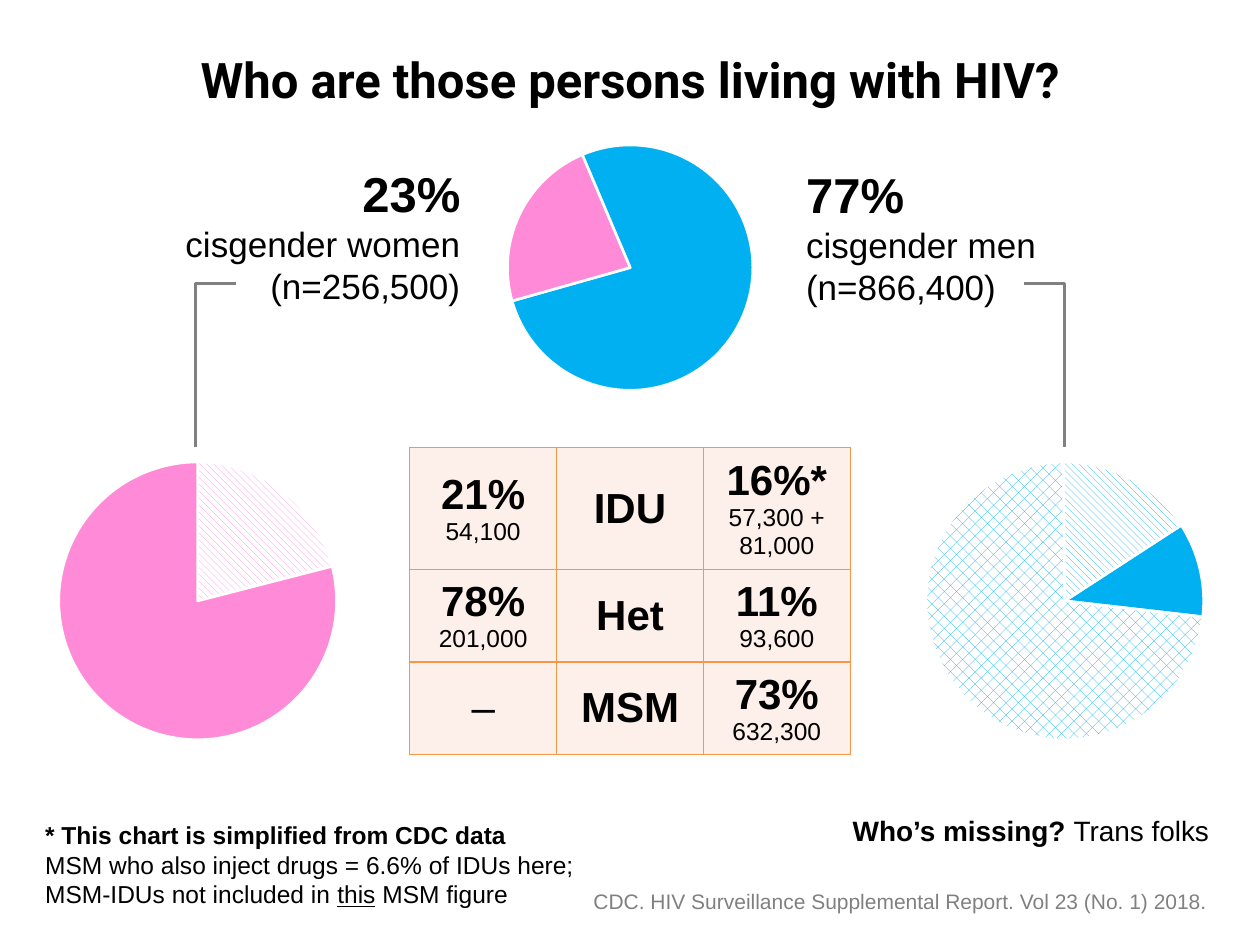
from dataclasses import dataclass

from lxml import etree
from pptx import Presentation
from pptx import util as u
from pptx.chart import data
from pptx.dml import color
from pptx.enum import chart, dml, shapes, text
from pptx.oxml import ns, parse_xml

Cm, Pt, RGB = u.Cm, u.Pt, color.RGBColor.from_string
LEFT, CENTER, RIGHT = text.PP_ALIGN.LEFT, text.PP_ALIGN.CENTER, text.PP_ALIGN.RIGHT


@dataclass(frozen=True)
class Theme:
    font: str = "Arial"
    title_font: str = "Roboto"
    chart_font: str = "Calibri"
    black: str = "000000"
    white: str = "FFFFFF"
    gray: str = "808080"
    men: str = "00B0F0"
    women: str = "FF8AD8"
    cell: str = "FDEFE9"
    border: str = "F79646"
    title: int = 28
    figure: int = 24
    label: int = 20
    aside: int = 16
    note: int = 14
    source: int = 12


T = Theme()


def write(tf, paragraphs, align=LEFT, font=T.font, fill=T.black):
    """Each paragraph is a list of runs: (text, size, style), style of b and u."""
    tf.word_wrap = True
    for i, runs in enumerate(paragraphs):
        p = tf.paragraphs[0] if i == 0 else tf.add_paragraph()
        p.alignment = align
        for words, size, style in runs:
            for n, line in enumerate(words.split("\n")):
                if n:
                    p.add_line_break()
                if not line:
                    continue
                r = p.add_run()
                r.text = line
                r.font.name, r.font.size = font, Pt(size)
                r.font.bold, r.font.underline = "b" in style, "u" in style
                r.font.color.rgb = RGB(fill)


def add_text(x, y, w, h, paragraphs, **look):
    tf = s.shapes.add_textbox(Cm(x), Cm(y), Cm(w), Cm(h)).text_frame
    write(tf, paragraphs, **look)
    return tf


prs = Presentation()
prs.slide_width, prs.slide_height = Cm(25.4), Cm(19.05)
s = prs.slides.add_slide(prs.slide_layouts[6])

# Title
tf = add_text(1.27, 0, 22.86, 3.18,
              [[("Who are those persons living with HIV?", T.title, "b")]],
              align=CENTER, font=T.title_font)
tf.vertical_anchor = text.MSO_ANCHOR.MIDDLE

# Source line
add_text(11, 17.78, 13.59, 0.76,
         [[("CDC. HIV Surveillance Supplemental Report. Vol 23 (No. 1) 2018.", T.source, "")]],
         align=RIGHT, fill=T.gray)

# Pies: everyone, men, women
stripes = dml.MSO_PATTERN.WIDE_DOWNWARD_DIAGONAL
dots = dml.MSO_PATTERN.PERCENT_30
pies = [
    (9.53, 2.54, 5.72, 4.95, 337, [(77, T.men, None), (23, T.women, None)]),
    (18.29, 7.82, 8.59, 5.6, 57, [(11, T.men, None), (73, T.men, dots), (16, T.men, stripes)]),
    (0.81, 7.82, 8.59, 5.6, 0, [(21, T.women, stripes), (79, T.women, None)]),
]
pie_w = 6.35
for x, y, h, diameter, start, slices in pies:
    cd = data.CategoryChartData()
    cd.categories = [str(i + 1) for i in range(len(slices))]
    cd.add_series("Series 1", [value for value, _, _ in slices])
    ch = s.shapes.add_chart(chart.XL_CHART_TYPE.PIE, Cm(x), Cm(y), Cm(pie_w), Cm(h), cd).chart
    ch.has_title = ch.has_legend = False
    ch.font.name, ch.font.size = T.chart_font, Pt(10)
    ch.font.color.rgb = RGB(T.black)
    plot = ch.plots[0]
    plot.vary_by_categories = True
    for i, (_, shade, pattern) in enumerate(slices):
        fmt = plot.series[0].points[i].format
        if pattern is None:
            fmt.fill.solid()
            fmt.fill.fore_color.rgb = RGB(shade)
        else:
            fmt.fill.patterned()
            fmt.fill.pattern = pattern
            fmt.fill.fore_color.rgb = RGB(shade)
            fmt.fill.back_color.rgb = RGB(T.white)
        fmt.line.color.rgb = RGB(T.white)
        fmt.line.width = Pt(1.5)

    # Start angle, and a centred plot of the given diameter
    pie = ch._chartSpace.find(".//" + ns.qn("c:pieChart"))
    for old in pie.findall(ns.qn("c:firstSliceAng")):
        pie.remove(old)
    etree.SubElement(pie, ns.qn("c:firstSliceAng")).set("val", str(start))
    area = pie.getparent()
    for old in area.findall(ns.qn("c:layout")):
        area.remove(old)
    fw, fh = diameter / pie_w, diameter / h
    area.insert(0, parse_xml(
        f'<c:layout {ns.nsdecls("c")}><c:manualLayout><c:layoutTarget val="inner"/>'
        f'<c:xMode val="edge"/><c:yMode val="edge"/>'
        f'<c:x val="{(1 - fw) / 2:.3f}"/><c:y val="{(1 - fh) / 2:.3f}"/>'
        f'<c:w val="{fw:.3f}"/><c:h val="{fh:.3f}"/></c:manualLayout></c:layout>'))

# Captions beside the top pie
for x, y, share, group, align in [
    (16, 3.2, "77%", "cisgender men\n(n=866,400)", LEFT),
    (2.44, 3.18, "23%", "cisgender women\n(n=256,500)", RIGHT),
]:
    add_text(x, y, 7.09, 3.18, [[(share, T.title, "b")], [(group, T.label, "")]], align=align)

# Table of transmission groups: women, group, men
rows = [
    (2.46, ("21%", "54,100"), ("IDU", ""), ("16%*", "57,300 +\n81,000")),
    (1.86, ("78%", "201,000"), ("Het", ""), ("11%", "93,600")),
    (1.86, ("–", ""), ("MSM", ""), ("73%", "632,300")),
]
tbl = s.shapes.add_table(3, 3, Cm(8.26), Cm(9.02), Cm(8.89), Cm(6.18)).table
tbl.first_row = tbl.horz_banding = False
for col in tbl.columns:
    col.width = Cm(2.96)
for i, (height, *cells) in enumerate(rows):
    tbl.rows[i].height = Cm(height)
    for j, (head, count) in enumerate(cells):
        cell = tbl.cell(i, j)
        cell.vertical_anchor = text.MSO_ANCHOR.MIDDLE
        runs = [(head, T.figure, "" if head == "–" else "b")]
        if count:
            runs.append(("\n" + count, T.note, ""))
        write(cell.text_frame, [runs], align=CENTER)
        tcPr = cell._tc.get_or_add_tcPr()
        for side in ("lnL", "lnR", "lnT", "lnB"):
            tcPr.append(parse_xml(
                f'<a:{side} {ns.nsdecls("a")} w="12700"><a:solidFill>'
                f'<a:srgbClr val="{T.border}"/></a:solidFill></a:{side}>'))
        cell.fill.solid()
        cell.fill.fore_color.rgb = RGB(T.cell)

# Footnote
add_text(0.66, 16.41, 12.98, 2.06, [
    [("* This chart is simplified from CDC data", T.note, "b")],
    [("MSM who also inject drugs = 6.6% of IDUs here; \nMSM-IDUs not included in ", T.note, ""),
     ("this", T.note, "u"), (" MSM figure", T.note, "")],
])

# Elbows from the captions down to the lower pies
for x1, x2 in [(20.65, 21.46), (4.75, 3.94)]:
    ln = s.shapes.add_connector(shapes.MSO_CONNECTOR.ELBOW, Cm(x1), Cm(5.72), Cm(x2), Cm(9.02))
    ln.line.color.rgb, ln.line.width = RGB(T.gray), Pt(2)
    spPr = ln._element.spPr
    geom = spPr.find(ns.qn("a:prstGeom"))
    geom.set("prst", "bentConnector2")
    etree.SubElement(spPr, ns.qn("a:effectLst"))

# Who is missing
add_text(16.94, 16.28, 8.46, 0.94,
         [[("Who’s missing? ", T.aside, "b"), ("Trans folks", T.aside, "")]])

prs.save("out.pptx")
